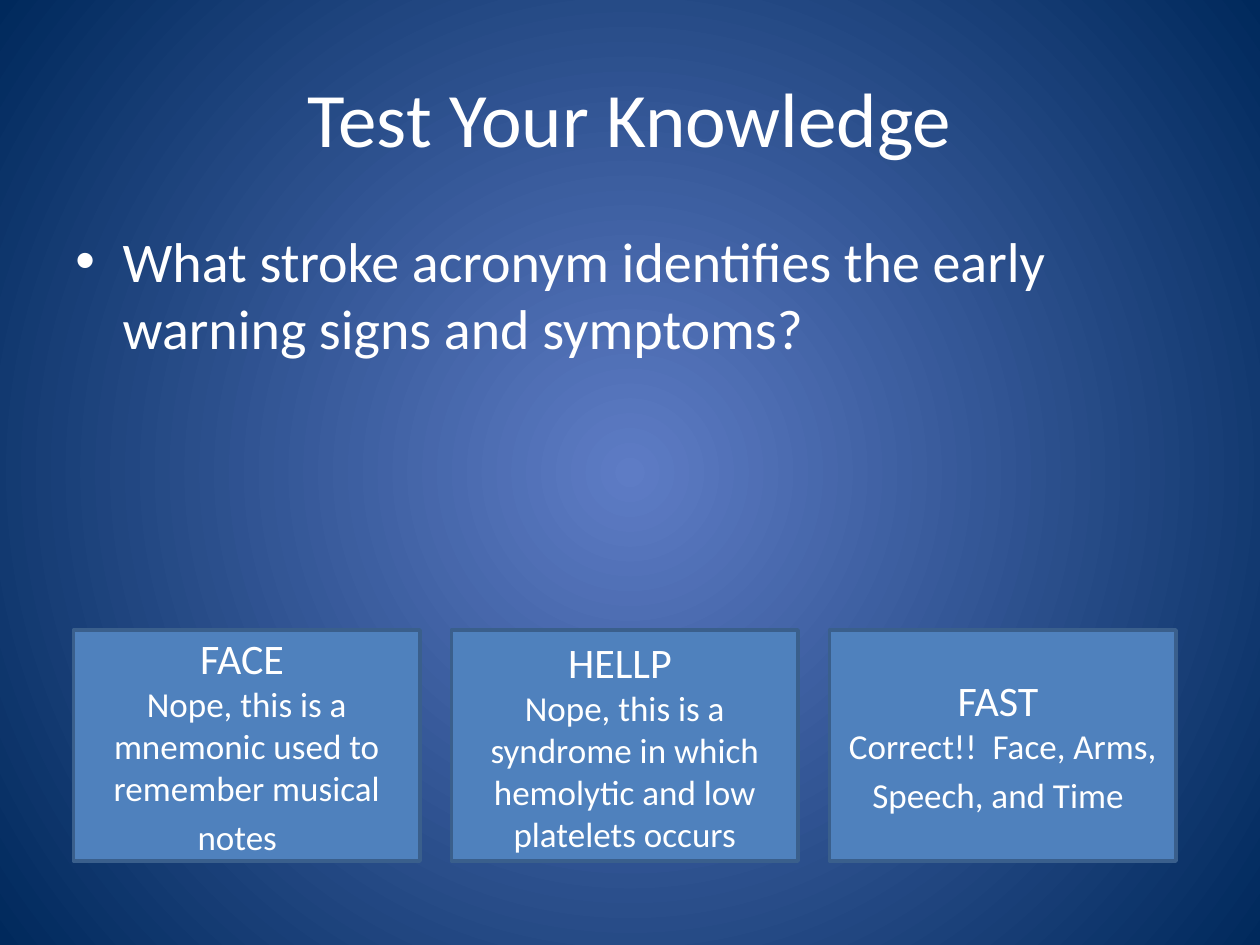
from pptx import Presentation
from pptx.dml.color import RGBColor
from pptx.enum.shapes import MSO_SHAPE
from pptx.enum.text import MSO_ANCHOR, PP_ALIGN
from pptx.oxml import parse_xml
from pptx.oxml.ns import nsdecls, qn
from pptx.util import Pt

# Content
TITLE = "Test Your Knowledge"
QUESTION = "What stroke acronym identifies the early warning signs and symptoms?"
# Acronym, feedback, trailing space set at acronym size
ANSWERS = [
    ("FACE ", "Nope, this is a mnemonic used to remember musical notes", "  "),
    ("HELLP ", "Nope, this is a syndrome in which hemolytic and low platelets occurs", ""),
    ("FAST ", "Correct!!  Face, Arms, Speech, and Time", " "),
]

THEME = {
    "font": "Calibri",
    "text": RGBColor.from_string("FFFFFF"),
    "glow": RGBColor.from_string("5E7CC5"),
    "edge": RGBColor.from_string("00295C"),
    "box": RGBColor.from_string("4F81BD"),
    "border": RGBColor.from_string("3A5F8C"),
    "title": 44, "question": 32, "acronym": 24, "feedback": 20,
}

# Layout in points
TITLE_AREA = (36, 21.6, 648, 90)
QUESTION_AREA = (36, 126, 648, 222)
ANSWER_LEFT, ANSWER_TOP, ANSWER_WIDTH, ANSWER_HEIGHT = 42, 360, 198, 132
ANSWER_GAP = 18
BULLET_INDENT = 27


def place(shape, area):
    for side, length in zip(("left", "top", "width", "height"), area):
        setattr(shape, side, Pt(length))


def add_text(paragraph, text, role):
    run = paragraph.add_run()
    run.text = text
    style = {"name": THEME["font"], "size": Pt(THEME[role])}
    for key, value in style.items():
        setattr(run.font, key, value)
    run.font.color.rgb = THEME["text"]


def format_frame(frame, anchor):
    for key, value in {"word_wrap": True, "vertical_anchor": anchor}.items():
        setattr(frame, key, value)


def paint_background(slide):
    fill = slide.background.fill
    fill.gradient()
    for stop, colour in zip(fill.gradient_stops, ("glow", "edge")):
        stop.color.rgb = THEME[colour]
    linear = slide.element.find(".//" + qn("a:lin"))
    linear.getparent().replace(linear, parse_xml(
        f'<a:path {nsdecls("a")} path="circle">'
        '<a:fillToRect l="50000" t="50000" r="50000" b="50000"/></a:path>'))


def add_title(slide):
    title = slide.shapes.title
    place(title, TITLE_AREA)
    format_frame(title.text_frame, MSO_ANCHOR.MIDDLE)
    paragraph = title.text_frame.paragraphs[0]
    paragraph.alignment = PP_ALIGN.CENTER
    add_text(paragraph, TITLE, "title")


def add_answer(slide, column, acronym, feedback, trailing):
    left = ANSWER_LEFT + column * (ANSWER_WIDTH + ANSWER_GAP)
    box = slide.shapes.add_shape(
        MSO_SHAPE.RECTANGLE,
        *map(Pt, (left, ANSWER_TOP, ANSWER_WIDTH, ANSWER_HEIGHT)))
    box.shadow.inherit = False
    box.fill.solid()
    box.fill.fore_color.rgb = THEME["box"]
    box.line.color.rgb = THEME["border"]
    box.line.width = Pt(2)
    format_frame(box.text_frame, MSO_ANCHOR.MIDDLE)
    heading = box.text_frame.paragraphs[0]
    detail = box.text_frame.add_paragraph()
    for paragraph in (heading, detail):
        paragraph.alignment = PP_ALIGN.CENTER
    add_text(heading, acronym, "acronym")
    add_text(detail, feedback, "feedback")
    if trailing:
        add_text(detail, trailing, "acronym")


def add_question(slide):
    question = slide.shapes.add_textbox(*map(Pt, QUESTION_AREA))
    format_frame(question.text_frame, MSO_ANCHOR.TOP)
    paragraph = question.text_frame.paragraphs[0]
    paragraph.space_before = Pt(0.2 * THEME["question"])
    add_text(paragraph, QUESTION, "question")
    # Hanging bullet
    properties = paragraph._p.get_or_add_pPr()
    properties.set("marL", str(Pt(BULLET_INDENT)))
    properties.set("indent", str(-Pt(BULLET_INDENT)))
    for tag in ('buFont {} typeface="Arial"', 'buChar {} char="•"'):
        properties.append(parse_xml(f'<a:{tag.format(nsdecls("a"))}/>'))


def main():
    deck = Presentation()
    deck.slide_width, deck.slide_height = Pt(720), Pt(540)
    slide = deck.slides.add_slide(deck.slide_layouts.get_by_name("Title Only"))
    paint_background(slide)
    add_title(slide)
    for column, answer in enumerate(ANSWERS):
        add_answer(slide, column, *answer)
    add_question(slide)
    deck.save("out.pptx")


if __name__ == "__main__":
    main()
